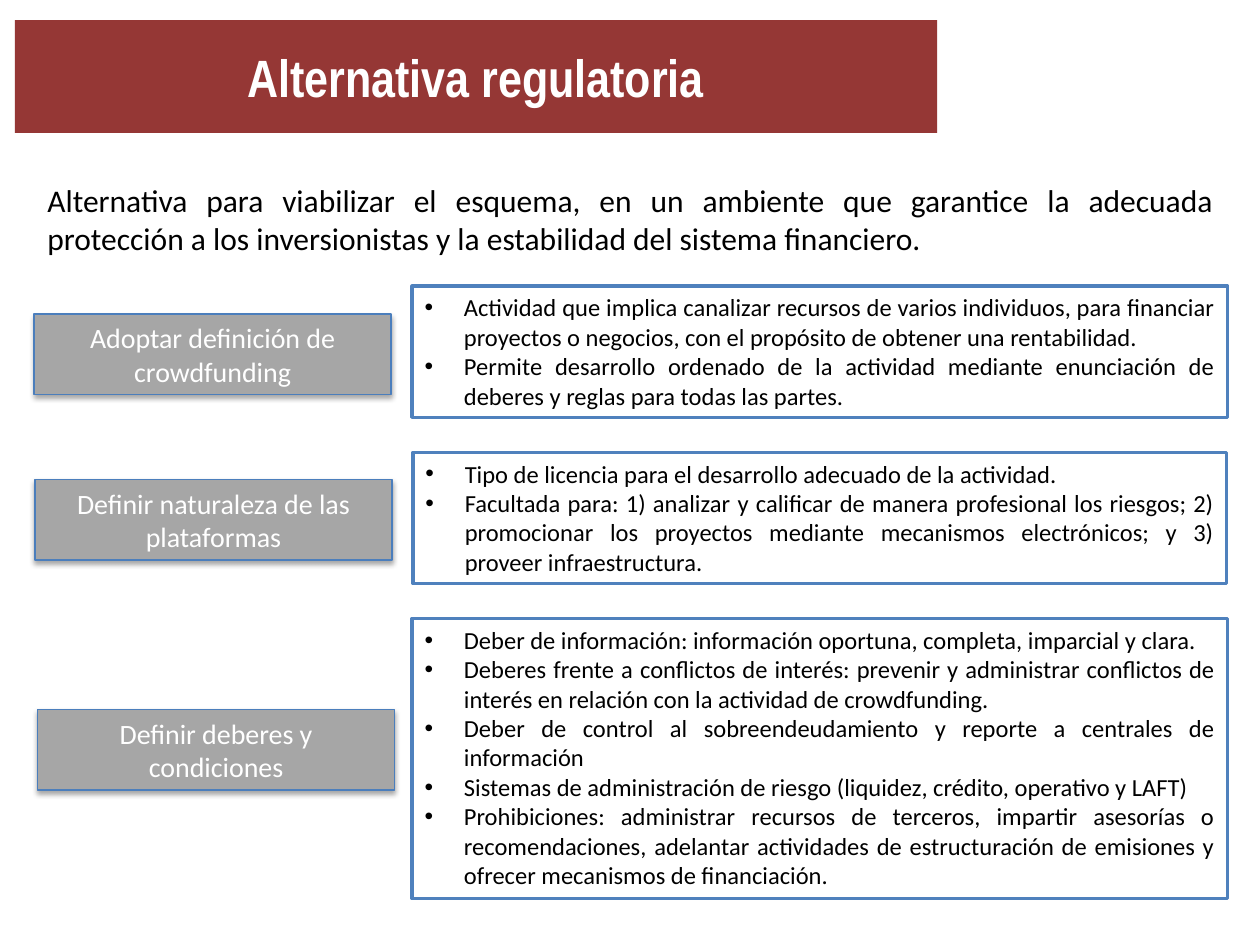
"""Build the slide on the regulatory alternative for crowdfunding."""
from lxml.etree import SubElement
from pptx import Presentation
from pptx.dml.color import RGBColor
from pptx.enum.shapes import MSO_SHAPE
from pptx.enum.text import MSO_ANCHOR, PP_ALIGN
from pptx.oxml.ns import qn
from pptx.util import Pt


def color(hex_code):
    return RGBColor.from_string(hex_code)


def write(shape, paragraphs, size, ink="000000", font="Calibri", bold=False,
          align=PP_ALIGN.JUSTIFY, anchor=MSO_ANCHOR.TOP, bullet=False):
    frame = shape.text_frame
    frame.word_wrap = True
    frame.vertical_anchor = anchor
    frame.text = "\n".join(paragraphs)
    for paragraph in frame.paragraphs:
        paragraph.alignment = align
        paragraph.space_before = Pt(0)
        if bullet:
            properties = paragraph._p.get_or_add_pPr()
            properties.set("marL", str(Pt(22.5)))
            properties.set("indent", str(-Pt(22.5)))
            SubElement(properties, qn("a:buFont"), typeface="Arial")
            SubElement(properties, qn("a:buChar"), char="•")
        paragraph.font.name = font
        paragraph.font.size = Pt(size)
        paragraph.font.bold = bold
        paragraph.font.color.rgb = color(ink)


presentation = Presentation()
presentation.slide_width, presentation.slide_height = Pt(720), Pt(540)
slide = presentation.slides.add_slide(presentation.slide_layouts[5])

title = slide.shapes.title
title.left, title.top, title.width, title.height = Pt(8.5), Pt(11.5), Pt(527), Pt(64.5)
title.fill.solid()
title.fill.fore_color.rgb = color("953735")
write(title, ["Alternativa regulatoria"], 30, ink="FFFFFF", font="Arial Narrow", bold=True,
      align=PP_ALIGN.CENTER, anchor=MSO_ANCHOR.MIDDLE)

purpose = slide.shapes.add_textbox(Pt(20), Pt(100), Pt(680.5), Pt(51))
write(purpose, ["Alternativa para viabilizar el esquema, en un ambiente que garantice la adecuada "
                "protección a los inversionistas y la estabilidad del sistema financiero."], 18)

measures = [
    ("Adoptar definición de crowdfunding", (19.5, 179.5), (235.5, 163.5, 466, 75), [
        "Actividad que implica canalizar recursos de varios individuos, para financiar "
        "proyectos o negocios, con el propósito de obtener una rentabilidad.",
        "Permite desarrollo ordenado de la actividad mediante enunciación de deberes y "
        "reglas para todas las partes.",
    ]),
    ("Definir naturaleza de las plataformas", (20, 274), (236, 258.5, 465, 75), [
        "Tipo de licencia para el desarrollo adecuado de la actividad.",
        "Facultada para: 1) analizar y calificar de manera profesional los riesgos; "
        "2) promocionar los proyectos mediante mecanismos electrónicos; y 3) proveer "
        "infraestructura.",
    ]),
    ("Definir deberes y condiciones", (21.5, 405.5), (235.5, 353.5, 466, 160), [
        "Deber de información: información oportuna, completa, imparcial y clara.",
        "Deberes frente a conflictos de interés: prevenir y administrar conflictos de "
        "interés en relación con la actividad de crowdfunding.",
        "Deber de control al sobreendeudamiento y reporte a centrales de información",
        "Sistemas de administración de riesgo (liquidez, crédito, operativo y LAFT)",
        "Prohibiciones: administrar recursos de terceros, impartir asesorías o "
        "recomendaciones, adelantar actividades de estructuración de emisiones y "
        "ofrecer mecanismos de financiación.",
    ]),
]

for heading, (left, top), detail_place, points in measures:
    label = slide.shapes.add_shape(MSO_SHAPE.RECTANGLE, Pt(left), Pt(top), Pt(204), Pt(46))
    detail = slide.shapes.add_shape(MSO_SHAPE.RECTANGLE, *map(Pt, detail_place))
    for box, fill, edge, weight in ((label, "A6A6A6", "4B7EBC", 0.75),
                                    (detail, "FFFFFF", "4F81BD", 2)):
        box.shadow.inherit = False
        box.fill.solid()
        box.fill.fore_color.rgb = color(fill)
        box.line.color.rgb = color(edge)
        box.line.width = Pt(weight)

    effects = label._element.spPr.find(qn("a:effectLst"))
    shadow = SubElement(effects, qn("a:outerShdw"), blurRad=str(Pt(3.1)), dist=str(Pt(1.8)),
                        dir="5400000", rotWithShape="0")
    shadow_color = SubElement(shadow, qn("a:srgbClr"), val="000000")
    SubElement(shadow_color, qn("a:alpha"), val="35000")

    write(label, [heading], 16, ink="FFFFFF", align=PP_ALIGN.CENTER, anchor=MSO_ANCHOR.MIDDLE)
    write(detail, points, 14, bullet=True)

presentation.save("out.pptx")
